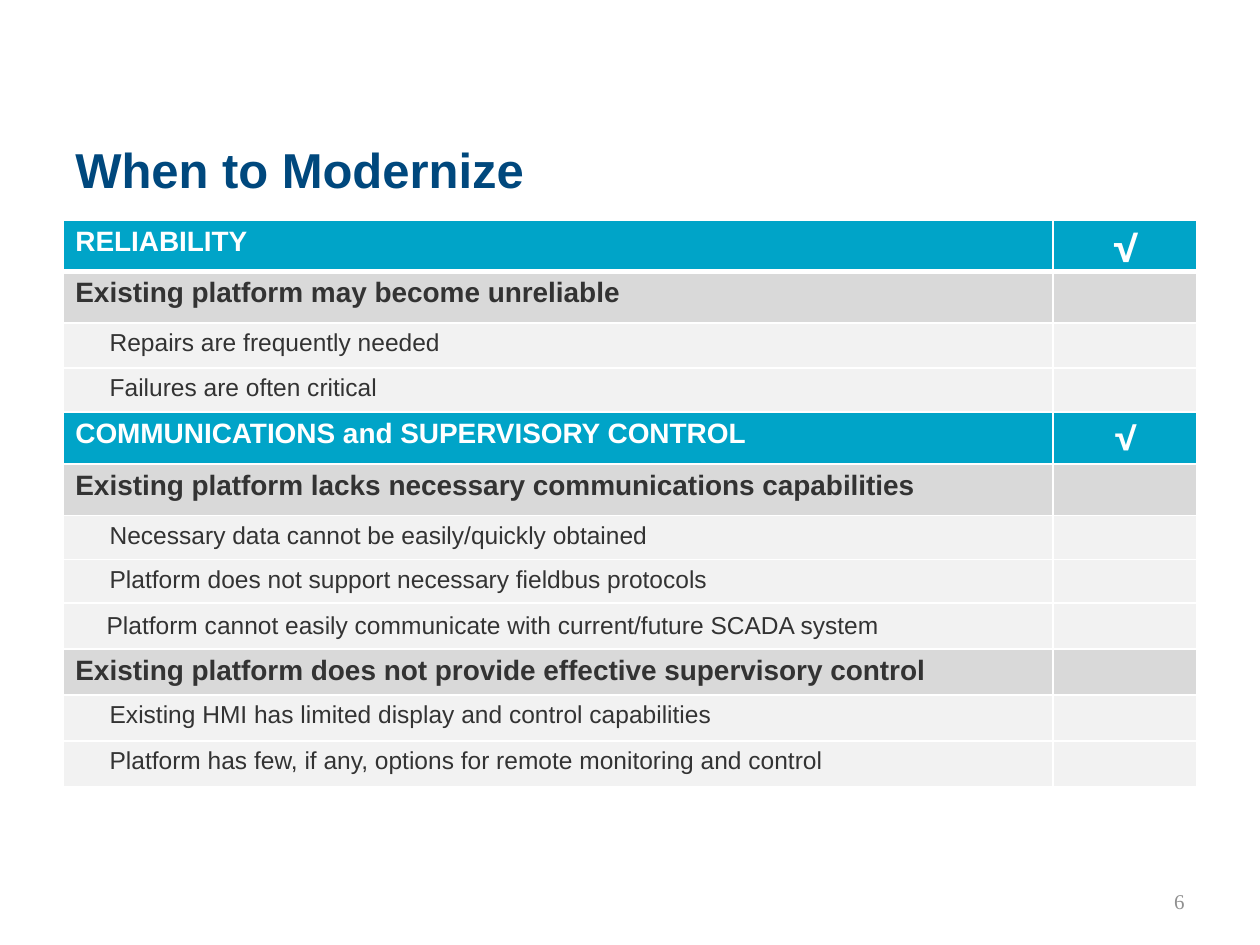
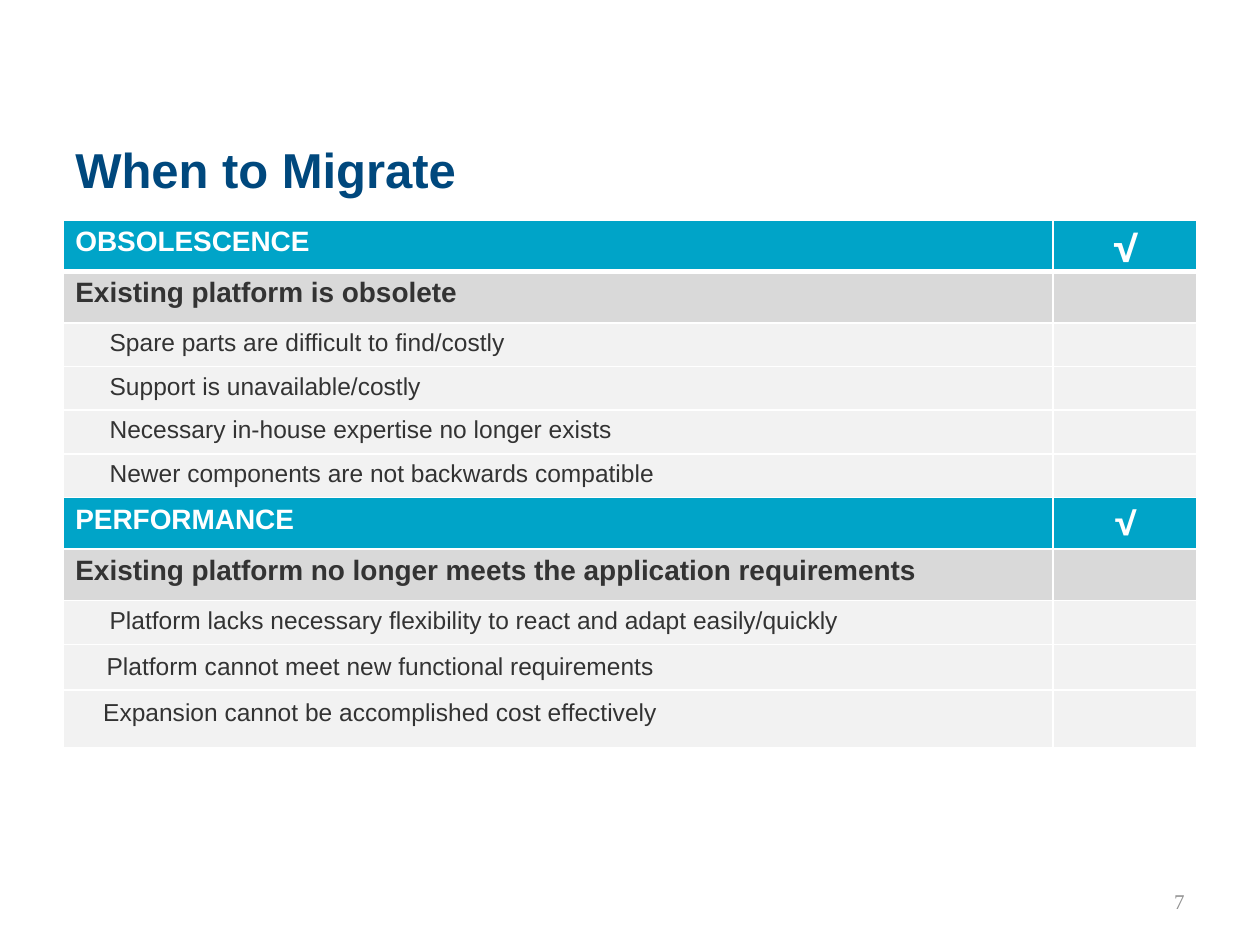
from dataclasses import dataclass

from lxml.etree import SubElement
from pptx import Presentation
from pptx.dml.color import RGBColor
from pptx.enum.text import MSO_ANCHOR, PP_ALIGN
from pptx.oxml.ns import qn
from pptx.util import Cm, Pt

CHECKLISTS = [
    {
        "title": "When to Modernize",
        "number": "6",
        "criteria": [
            ("section", 1.04, "RELIABILITY"),
            ("group", 1.04, "Existing platform may become unreliable"),
            ("sign", 0.91, "Repairs are frequently needed"),
            ("sign", 0.89, "Failures are often critical"),
            ("section", 1.04, "COMMUNICATIONS and SUPERVISORY CONTROL"),
            ("group", 1.04, "Existing platform lacks necessary communications capabilities"),
            ("sign", 0.89, "Necessary data cannot be easily/quickly obtained"),
            ("sign", 0.88, "Platform does not support necessary fieldbus protocols"),
            ("near sign", 0.92, "Platform cannot easily communicate with current/future SCADA system"),
            ("group", 0.92, "Existing platform does not provide effective supervisory control"),
            ("sign", 0.92, "Existing HMI has limited display and control capabilities"),
            ("sign", 0.92, "Platform has few, if any, options for remote monitoring and control"),
        ],
    },
    {
        "title": "When to Migrate",
        "number": "7",
        "criteria": [
            ("section", 1.04, "OBSOLESCENCE"),
            ("group", 1.04, "Existing platform is obsolete"),
            ("sign", 0.88, "Spare parts are difficult to find/costly"),
            ("sign", 0.88, "Support is unavailable/costly"),
            ("sign", 0.88, "Necessary in-house expertise no longer exists"),
            ("sign", 0.88, "Newer components are not backwards compatible"),
            ("section", 1.04, "PERFORMANCE"),
            ("group", 1.04, "Existing platform no longer meets the application requirements"),
            ("sign", 0.88, "Platform lacks necessary flexibility to react and adapt easily/quickly"),
            ("near sign", 0.92, "Platform cannot meet new functional requirements"),
            ("nearest sign", 1.16, "Expansion cannot be accomplished cost effectively"),
        ],
    },
]
CHECK = "√"


@dataclass(frozen=True)
class Theme:
    navy: str = "00487D"
    cyan: str = "00A4C8"
    silver: str = "D9D9D9"
    mist: str = "F2F2F2"
    ink: str = "333333"
    grey: str = "909090"
    white: str = "FFFFFF"
    body_font: str = "Arial"
    check_font: str = "Montserrat"
    number_font: str = "Times New Roman"
    title_size: int = 28
    first_check_size: int = 18
    heading_size: int = 16
    sign_size: int = 14
    number_size: int = 12


THEME = Theme()
SIGN = (THEME.mist, THEME.ink, THEME.sign_size, False)
LEVELS = {
    "section": (THEME.cyan, THEME.white, THEME.heading_size, True, 0, 0.13),
    "group": (THEME.silver, THEME.ink, THEME.heading_size, True, 0, 0.13),
    "sign": (*SIGN, 0.69, 0.13),
    "near sign": (*SIGN, 0.63, 0.18),
    "nearest sign": (*SIGN, 0.56, 0.18),
}
LEFT, WIDTH, CHECK_WIDTH = 1.27, 22.86, 2.9


def write(frame, text, font, size, color, bold=False, align=PP_ALIGN.LEFT):
    frame.text = text
    paragraph = frame.paragraphs[0]
    paragraph.alignment = align
    for run in paragraph.runs:
        run.font.name = font
        run.font.size = Pt(size)
        run.font.bold = bold
        run.font.color.rgb = RGBColor.from_string(color)


def add_label(slide, left, top, width, height, *style, **options):
    frame = slide.shapes.add_textbox(Cm(left), Cm(top), Cm(width), Cm(height)).text_frame
    frame.word_wrap = True
    frame.vertical_anchor = MSO_ANCHOR.MIDDLE
    write(frame, *style, **options)


def rule_cell(cell, top, bottom):
    properties = cell._tc.get_or_add_tcPr()
    for side, points in (("L", 1), ("R", 1), ("T", top), ("B", bottom)):
        line = SubElement(properties, qn(f"a:ln{side}"), w=str(Pt(points)))
        SubElement(SubElement(line, qn("a:solidFill")), qn("a:srgbClr"), val=THEME.white)


def add_criteria(slide, criteria):
    height = sum(row_height for _, row_height, _ in criteria)
    table = slide.shapes.add_table(
        len(criteria), 2, Cm(LEFT), Cm(4.43), Cm(WIDTH), Cm(height)
    ).table
    table.horz_banding = False
    table.columns[0].width = Cm(WIDTH - CHECK_WIDTH)
    table.columns[1].width = Cm(CHECK_WIDTH)
    for index, (level, row_height, criterion) in enumerate(criteria):
        fill, color, size, bold, indent, top_margin = LEVELS[level]
        table.rows[index].height = Cm(row_height)
        criterion_cell, check_cell = table.cell(index, 0), table.cell(index, 1)
        for cell in (criterion_cell, check_cell):
            rule_cell(cell, 3 if index == 1 else 1, 3 if index == 0 else 1)
            cell.fill.solid()
            cell.fill.fore_color.rgb = RGBColor.from_string(fill)
        criterion_cell.margin_left = Cm(0.25 + indent)
        criterion_cell.margin_top = Cm(top_margin)
        write(criterion_cell.text_frame, criterion, THEME.body_font, size, color, bold)
        if level == "section":
            check_size = size if index else THEME.first_check_size
            write(check_cell.text_frame, CHECK, THEME.check_font, check_size, color, bold, PP_ALIGN.CENTER)
        else:
            blank = check_cell.text_frame.paragraphs[0]._p
            SubElement(blank, qn("a:endParaRPr"), sz=str(THEME.sign_size * 100))


def main():
    deck = Presentation()
    deck.slide_width, deck.slide_height = Cm(25.4), Cm(19.05)
    for checklist in CHECKLISTS:
        slide = deck.slides.add_slide(deck.slide_layouts[6])
        add_label(slide, LEFT, 2.46, WIDTH, 1.88, checklist["title"],
                  THEME.body_font, THEME.title_size, THEME.navy, bold=True)
        add_label(slide, 18.2, 17.66, 5.93, 1.01, checklist["number"],
                  THEME.number_font, THEME.number_size, THEME.grey, align=PP_ALIGN.RIGHT)
        add_criteria(slide, checklist["criteria"])
    deck.save("out.pptx")


if __name__ == "__main__":
    main()
